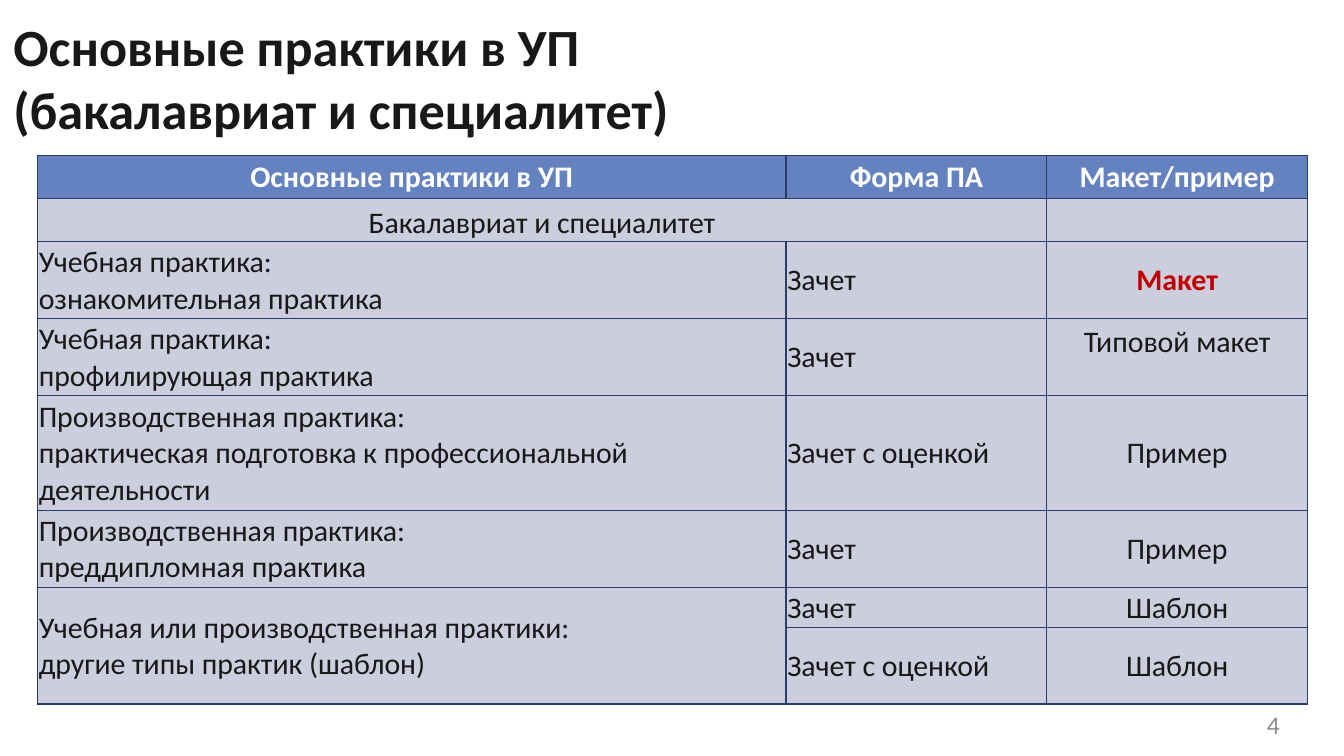
from dataclasses import dataclass

from lxml import etree
from pptx import Presentation
from pptx import util as u
from pptx.dml import color
from pptx.enum import text
from pptx.oxml import ns

FONT = "Calibri"
INK, WHITE, RED, GREY = "181818", "FFFFFF", "C00000", "8C8C8C"
HEADER_FILL, BODY_FILL, BORDER = "6582C0", "CCCEDE", "293D69"
LEFT, CENTER = text.PP_ALIGN.LEFT, text.PP_ALIGN.CENTER
RIGHT, JUSTIFY = text.PP_ALIGN.RIGHT, text.PP_ALIGN.JUSTIFY
MIDDLE, BOTTOM = text.MSO_ANCHOR.MIDDLE, text.MSO_ANCHOR.BOTTOM
COLUMN_ALIGN = (LEFT, JUSTIFY, CENTER)
COLUMN_WIDTHS = (401, 139.7, 139.7)


@dataclass(frozen=True)
class Style:
    size: float = 16
    ink: str = INK
    bold: bool = False


@dataclass(frozen=True)
class Entry:
    words: str = ""
    style: Style = Style()
    align: text.PP_ALIGN | None = None
    anchor: text.MSO_ANCHOR = MIDDLE
    below: float = 0


@dataclass(frozen=True)
class Row:
    height: float
    entries: tuple[Entry, ...]
    fill: str = BODY_FILL


def rgb(value: str) -> color.RGBColor:
    return color.RGBColor.from_string(value)


def add_span(para, words: str, style: Style) -> None:
    span = para.add_run()
    span.text = words
    span.font.name = FONT
    span.font.size = u.Pt(style.size)
    span.font.bold = style.bold
    span.font.color.rgb = rgb(style.ink)


def place(box, left: float, top: float, width: float, height: float) -> None:
    box.left, box.top = u.Pt(left), u.Pt(top)
    box.width, box.height = u.Pt(width), u.Pt(height)


def set_borders(cell) -> None:
    properties = cell._tc.get_or_add_tcPr()
    for index, side in enumerate(("lnL", "lnR", "lnT", "lnB")):
        line = etree.Element(ns.qn(f"a:{side}"), w=str(u.Pt(0.75)))
        fill = etree.SubElement(line, ns.qn("a:solidFill"))
        etree.SubElement(fill, ns.qn("a:srgbClr"), val=BORDER)
        properties.insert(index, line)


def fill_cell(cell, entry: Entry, fill: str, align: text.PP_ALIGN) -> None:
    cell.margin_left = cell.margin_right = cell.margin_top = u.Pt(0.7)
    cell.margin_bottom = u.Pt(entry.below)
    cell.vertical_anchor = entry.anchor
    cell.fill.solid()
    cell.fill.fore_color.rgb = rgb(fill)
    set_borders(cell)
    para = cell.text_frame.paragraphs[0]
    para.alignment = entry.align or align
    if entry.words:
        for index, words in enumerate(entry.words.split("\n")):
            if index:
                para.add_line_break()
            add_span(para, words, entry.style)


def header(words: str) -> Entry:
    return Entry(words, Style(ink=WHITE, bold=True), CENTER)


def practice(height: float, name: str, form: str, sample: Entry) -> Row:
    return Row(height, (Entry(name), Entry(form), sample))


ROWS = (
    Row(23.1, (header("Основные практики в УП"), header("Форма ПА"),
               header("Макет/пример")), HEADER_FILL),
    Row(23.1, (Entry("Бакалавриат и специалитет", align=CENTER, anchor=BOTTOM),
               Entry(), Entry())),
    practice(41.2, "Учебная практика:\nознакомительная практика", "Зачет",
             Entry("Макет", Style(ink=RED, bold=True))),
    practice(41.2, "Учебная практика:\nпрофилирующая практика", "Зачет",
             Entry("Типовой макет", below=16)),
    practice(61.6, "Производственная практика:\nпрактическая подготовка "
             "к профессиональной деятельности", "Зачет с оценкой",
             Entry("Пример")),
    practice(41.2, "Производственная практика:\nпреддипломная практика",
             "Зачет", Entry("Пример")),
    practice(21.4, "Учебная или производственная практики:\n"
             "другие типы практик (шаблон)", "Зачет", Entry("Шаблон")),
    practice(41.2, "", "Зачет с оценкой", Entry("Шаблон")),
)


def add_title(page, lines: tuple[str, ...]) -> None:
    box = page.shapes.title
    place(box, 0, 4, 613.4, 68.4)
    frame = box.text_frame
    frame.auto_size = text.MSO_AUTO_SIZE.NONE
    frame.vertical_anchor = text.MSO_ANCHOR.TOP
    for index, words in enumerate(lines):
        para = frame.add_paragraph() if index else frame.paragraphs[0]
        para.alignment = LEFT
        add_span(para, words, Style(28, bold=True))


def add_practices(page, rows: tuple[Row, ...]) -> None:
    frame = page.shapes.add_table(
        len(rows), len(COLUMN_WIDTHS), u.Pt(20.1), u.Pt(83.3),
        u.Pt(sum(COLUMN_WIDTHS)), u.Pt(sum(row.height for row in rows)))
    table = frame.table
    for column, width in zip(table.columns, COLUMN_WIDTHS):
        column.width = u.Pt(width)
    for y, row in enumerate(rows):
        table.rows[y].height = u.Pt(row.height)
        for x, entry in enumerate(row.entries):
            fill_cell(table.cell(y, x), entry, row.fill, COLUMN_ALIGN[x])
    table.cell(1, 0).merge(table.cell(1, 1))
    table.cell(6, 0).merge(table.cell(7, 0))


def add_page_number(page, number: str) -> None:
    box = page.shapes.add_textbox(u.Pt(652.3), u.Pt(377.3), u.Pt(40.3), u.Pt(21.6))
    frame = box.text_frame
    frame.word_wrap = True
    frame.vertical_anchor = MIDDLE
    para = frame.paragraphs[0]
    para.alignment = RIGHT
    add_span(para, number, Style(13.6, GREY))


def main() -> None:
    deck = Presentation()
    deck.slide_width, deck.slide_height = u.Pt(720), u.Pt(405)
    page = deck.slides.add_slide(deck.slide_layouts.get_by_name("Title Only"))
    add_page_number(page, "4")
    add_title(page, ("Основные практики в УП", "(бакалавриат и специалитет)"))
    add_practices(page, ROWS)
    deck.save("out.pptx")


if __name__ == "__main__":
    main()
